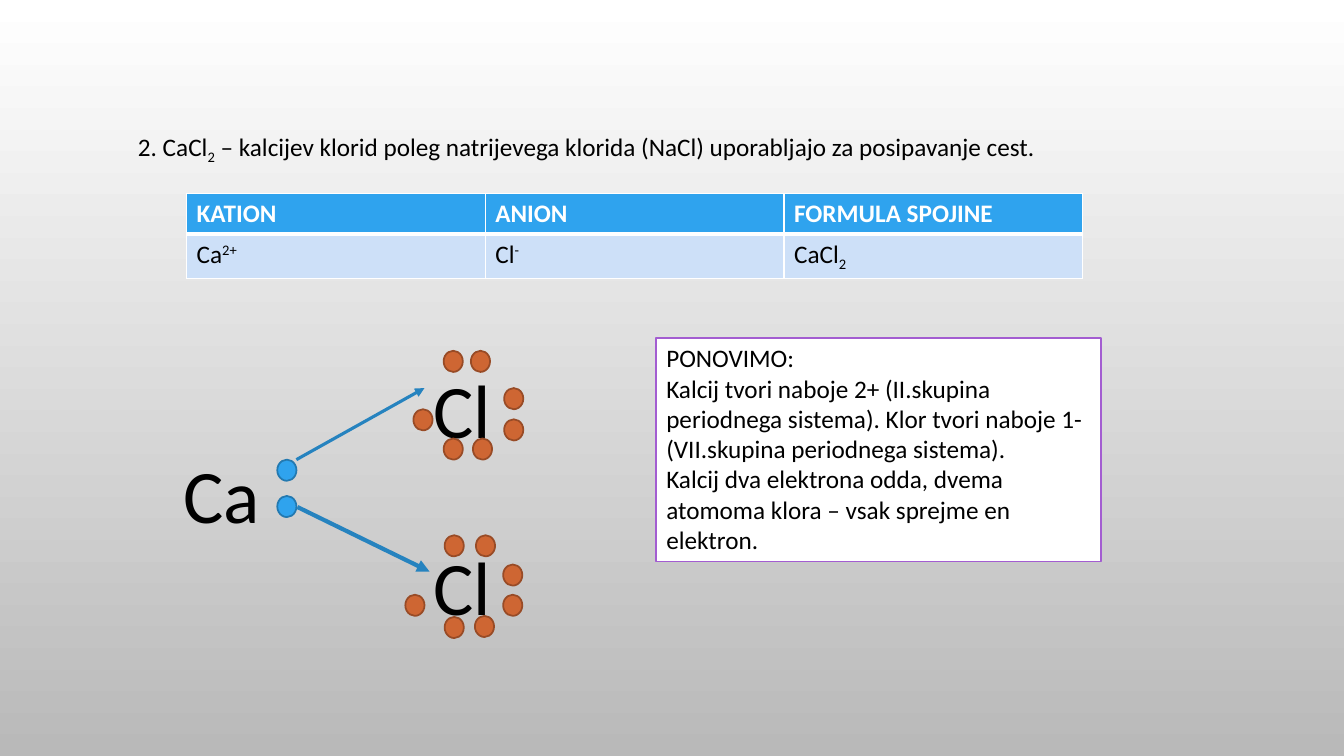
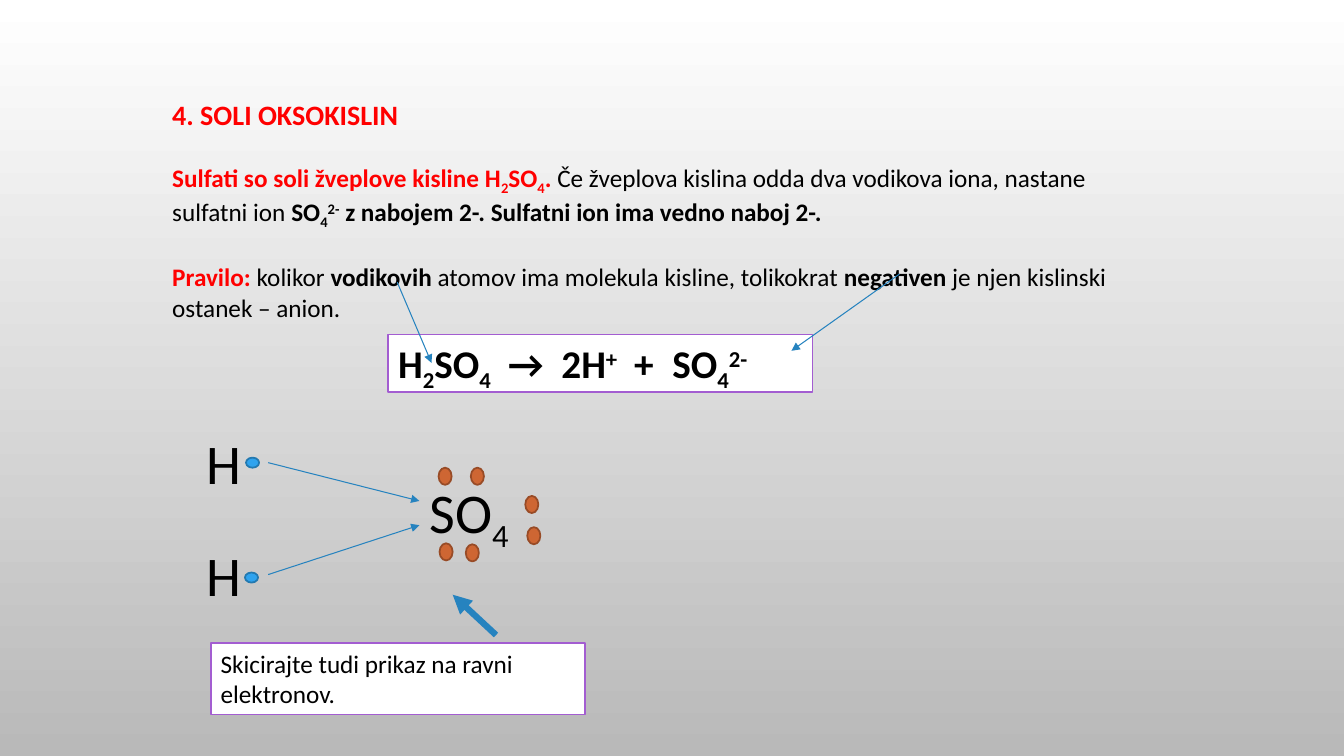
from lxml import etree
from pptx import Presentation
from pptx.dml.color import RGBColor
from pptx.enum import shapes, text
from pptx.oxml import ns
from pptx.util import Inches, Pt

FONT = "Calibri"
BLACK, WHITE, RED = "000000", "FFFFFF", "FF0000"
PAGE_BOTTOM = "B9B9B9"
ARROW_BLUE, PANEL_LINE = "2683BF", "A35DD1"
HEADER_FILL, ROW_FILL = "2FA3EE", "CDE0F8"
METAL = ("2FA3EE", "2379B0")
NONMETAL = ("CE6633", "984B26")
BASELINES = {"_": "-25000", "^": "30000"}


def color(value):
    return RGBColor.from_string(value)


def add_xml(parent, tag, **attributes):
    return etree.SubElement(parent, ns.qn(tag), attributes)


class Lesson:
    """Holds the deck, its style and the current page."""

    def __init__(self):
        self.deck = Presentation()
        self.deck.slide_width = Inches(13.33)
        self.deck.slide_height = Inches(7.5)
        self.page = None

    def new_page(self):
        self.page = self.deck.slides.add_slide(self.deck.slide_layouts[6])
        fill = self.page.background.fill
        fill.gradient()
        fill.gradient_angle = 270
        for stop, shade in zip(fill.gradient_stops, (WHITE, PAGE_BOTTOM)):
            stop.color.rgb = color(shade)

    def set_text(self, frame, paragraphs, size=18, ink=BLACK, gap=0):
        """Spans are (text, marks): b bold, r red, _ subscript, ^ superscript."""
        for index, spans in enumerate(paragraphs):
            para = frame.paragraphs[0] if index == 0 else frame.add_paragraph()
            para.alignment = text.PP_ALIGN.LEFT
            if index:
                para.space_before = Pt(gap)
            for words, marks in spans:
                span = para.add_run()
                span.text = words
                span.font.name = FONT
                span.font.size = Pt(size)
                span.font.bold = "b" in marks
                span.font.color.rgb = color(RED if "r" in marks else ink)
                for mark, baseline in BASELINES.items():
                    if mark in marks:
                        span.font._element.set("baseline", baseline)

    def fit(self, box, paragraphs, wrap=True, **style):
        frame = box.text_frame
        frame.word_wrap = wrap
        frame.auto_size = text.MSO_AUTO_SIZE.SHAPE_TO_FIT_TEXT
        frame.vertical_anchor = text.MSO_ANCHOR.TOP
        self.set_text(frame, paragraphs, **style)

    def label(self, place, paragraphs, **style):
        box = self.page.shapes.add_textbox(*map(Inches, place))
        self.fit(box, paragraphs, **style)
        return box

    def outlined(self, preset, place, fill, line):
        box = self.page.shapes.add_shape(preset, *map(Inches, place))
        box.shadow.inherit = False
        box.fill.solid()
        box.fill.fore_color.rgb = color(fill)
        box.line.color.rgb = color(line)
        box.line.width = Pt(1.25)
        return box

    def panel(self, place, paragraphs, **style):
        box = self.outlined(shapes.MSO_SHAPE.RECTANGLE, place, WHITE, PANEL_LINE)
        self.fit(box, paragraphs, **style)
        return box

    def electrons(self, points, size, colors):
        for point in points:
            self.outlined(shapes.MSO_SHAPE.OVAL, (*point, *size), *colors)

    def arrow(self, start, end, width=0.75):
        line = self.page.shapes.add_connector(
            shapes.MSO_CONNECTOR.STRAIGHT, *map(Inches, (*start, *end)))
        line.line.color.rgb = color(ARROW_BLUE)
        line.line.width = Pt(width)
        add_xml(line.line._get_or_add_ln(), "a:tailEnd", type="triangle")
        add_xml(line._element.spPr, "a:effectLst")

    def borders(self, cell, **widths):
        properties = cell._tc.get_or_add_tcPr()
        for side in "LRTB":
            edge = add_xml(properties, f"a:ln{side}", w=str(Pt(widths.get(side, 1))))
            add_xml(add_xml(edge, "a:solidFill"), "a:srgbClr", val=WHITE)

    def table(self, place, rows):
        grid = self.page.shapes.add_table(
            len(rows), len(rows[0]), *map(Inches, place)).table
        for r, row in enumerate(rows):
            header = r == 0
            for c, spans in enumerate(row):
                cell = grid.cell(r, c)
                self.borders(cell, **({"B": 3} if header else {"T": 3}))
                cell.fill.solid()
                cell.fill.fore_color.rgb = color(HEADER_FILL if header else ROW_FILL)
                self.set_text(cell.text_frame, [spans], ink=WHITE if header else BLACK)


def set_tabs(para, stops):
    tabs = add_xml(para._p.get_or_add_pPr(), "a:tabLst")
    for stop in stops:
        add_xml(tabs, "a:tab", pos=str(Inches(stop)), algn="l")


def calcium_chloride(lesson):
    lesson.new_page()
    lesson.label((1.27, 1.25, 10.5, 0.4), [[
        ("2. CaCl", ""), ("2", "_"),
        (" – kalcijev klorid poleg natrijevega klorida (NaCl) uporabljajo"
         " za posipavanje cest.", "")]])
    lesson.table((1.85, 1.92, 8.89, 0.81), [
        [[("KATION", "b")], [("ANION", "b")], [("FORMULA SPOJINE", "b")]],
        [[("Ca", ""), ("2+", "^")], [("Cl", ""), ("-", "^")],
         [("CaCl", ""), ("2", "_")]]])

    dot = (0.19, 0.21)
    lesson.label((1.72, 4.39, 1.45, 1.01), [[("Ca", "")]], size=54)
    lesson.electrons([(2.75, 4.56), (2.75, 4.92)], dot, METAL)
    chlorines = {
        3.55: [(4.4, 3.48), (4.67, 3.48), (4.4, 4.35), (4.69, 4.35),
               (4.1, 4.06), (5, 3.85), (5, 4.16)],
        5.31: [(4.41, 5.31), (4.72, 5.31), (4.41, 6.12), (4.71, 6.11),
               (4.02, 5.9), (4.99, 5.6), (4.99, 5.9)],
    }
    for top, points in chlorines.items():
        lesson.label((4.2, top, 1.3, 1.01), [[("Cl", "")]], size=54)
        lesson.electrons(points, dot, NONMETAL)
    lesson.arrow((2.94, 4.56), (4.21, 3.85), 2.25)
    lesson.arrow((2.95, 5.03), (4.26, 5.67), 3)

    lesson.panel((6.51, 3.35, 4.41, 2.22), [
        [("PONOVIMO:", "")],
        [("Kalcij tvori naboje 2+ (II.skupina periodnega sistema). "
          "Klor tvori naboje 1- (VII.skupina periodnega sistema).", "")],
        [("Kalcij dva elektrona odda, dvema atomoma klora – vsak sprejme"
          " en elektron.", "")]])


def oxoacid_salts(lesson):
    lesson.new_page()
    rules = lesson.label((1.61, 0.92, 9.86, 2.26), [
        [("4. SOLI OKSOKISLIN", "br")],
        [("Sulfati so soli žveplove kisline H", "br"), ("2", "br_"),
         ("SO", "br"), ("4", "br_"), (". ", "br"),
         ("Če žveplova kislina odda dva vodikova iona, nastane sulfatni ion ", ""),
         ("SO", "b"), ("4", "b_"), ("2-", "b^"),
         (" z nabojem 2-. Sulfatni ion ima vedno naboj 2-.", "b")],
        [("Pravilo: ", "br"), ("kolikor ", ""), ("vodikovih", "b"),
         (" atomov ima molekula kisline, tolikokrat ", ""), ("negativen", "b"),
         (" je njen kislinski ostanek – anion.", "")]], gap=22)
    rules.text_frame.paragraphs[0].runs[0].font.size = Pt(20)

    equation = lesson.panel((3.85, 3.32, 4.21, 0.57), [[
        ("H", "b"), ("2", "b_"), ("SO", "b"), ("4", "b_"), ("\t→\t2H", "b"),
        ("+", "b^"), ("\t+\tSO", "b"), ("4", "b_"), ("2-", "b^")]], size=28)
    set_tabs(equation.text_frame.paragraphs[0], (1.09, 1.62, 2.34, 2.72))

    for top in (4.2, 5.31):
        lesson.label((1.95, top, 0.96, 0.77), [[("H", "")]], size=40)
    lesson.electrons([(2.44, 4.54), (2.43, 5.68)], (0.13, 0.1), METAL)
    lesson.label((4.16, 4.69, 1.12, 0.77), [[("SO", ""), ("4", "_")]],
                 size=40, wrap=False)
    lesson.electrons([(4.35, 4.64), (4.67, 4.64), (5.21, 4.92), (5.23, 5.23),
                      (4.36, 5.39), (4.62, 5.4)], (0.13, 0.17), NONMETAL)
    for start, end in [((2.66, 4.59), (4.16, 4.97)), ((2.66, 5.7), (4.16, 5.21)),
                       ((3.94, 2.8), (4.28, 3.6)), ((8.92, 2.72), (7.85, 3.48))]:
        lesson.arrow(start, end)

    lesson.panel((2.09, 6.38, 3.71, 0.71),
                 [[("Skicirajte tudi prikaz na ravni elektronov.", "")]])
    lesson.arrow((4.92, 6.3), (4.49, 5.9), 4.5)


def main():
    lesson = Lesson()
    calcium_chloride(lesson)
    oxoacid_salts(lesson)
    lesson.deck.save("out.pptx")


if __name__ == "__main__":
    main()
